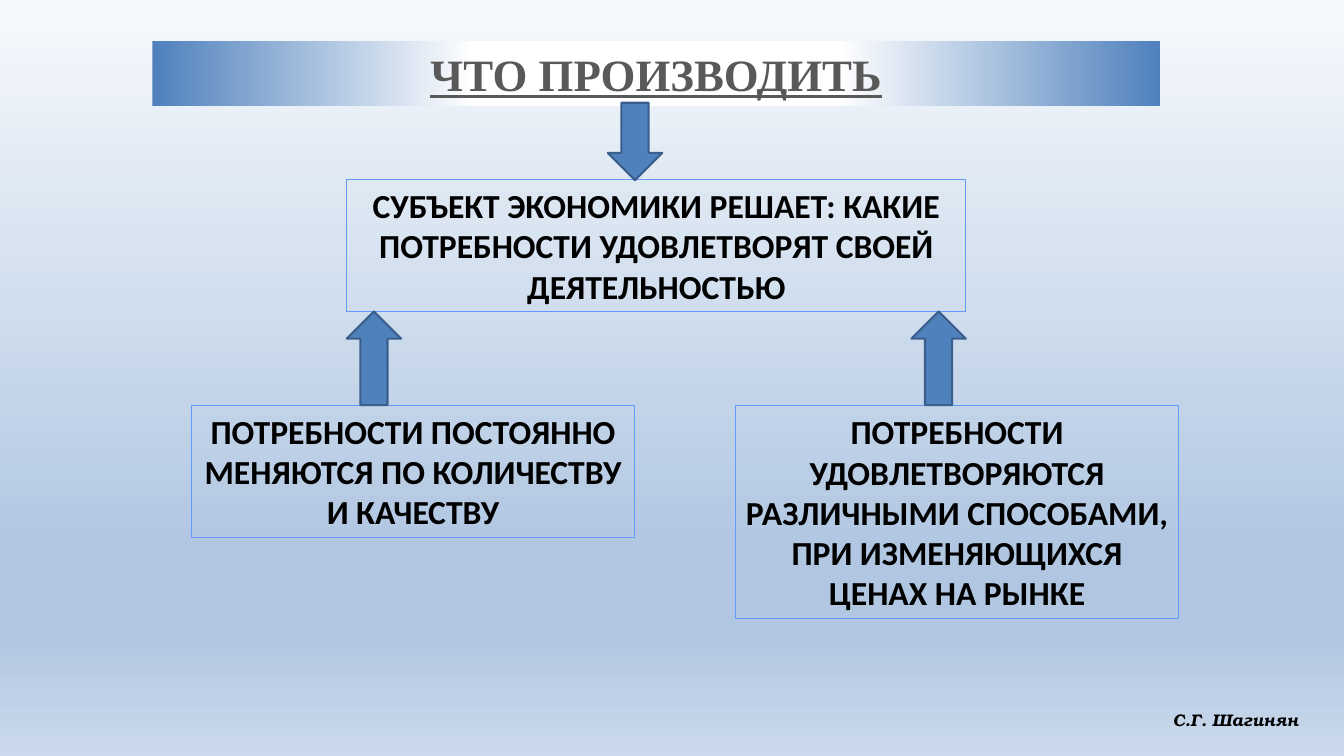
from copy import deepcopy
from pptx import Presentation
from pptx.dml.color import RGBColor
from pptx.enum.shapes import MSO_SHAPE
from pptx.enum.text import MSO_ANCHOR, MSO_AUTO_SIZE, PP_ALIGN
from pptx.oxml.ns import qn
from pptx.util import Cm, Pt

BLUE, WHITE, BLACK = "4F81BD", "FFFFFF", "000000"


def color(code):
    """Turn a hex string into a colour."""
    return RGBColor.from_string(code)


def blend(fill, root, stops, angle):
    """Give a fill a linear gradient with any number of stops."""
    fill.gradient()
    fill.gradient_angle = angle
    marks = root.find(".//" + qn("a:gsLst"))
    for _ in stops[2:]:
        marks.append(deepcopy(marks[0]))
    for mark, (place, code) in zip(fill.gradient_stops, stops):
        mark.position = place
        mark.color.rgb = color(code)


def write(shape, text, size, face, code, align=PP_ALIGN.CENTER, wrap=True):
    """Write one bold run into a shape and return its font."""
    frame = shape.text_frame
    frame.word_wrap = wrap
    frame.auto_size = MSO_AUTO_SIZE.NONE
    frame.vertical_anchor = MSO_ANCHOR.MIDDLE
    par = frame.paragraphs[0]
    par.alignment = align
    run = par.add_run()
    run.text = text
    font = run.font
    font.size, font.name, font.bold = Pt(size), face, True
    font.color.rgb = color(code)
    return font


def draw(slide, kind, box, line, width, fill=None):
    """Draw a flat outlined shape in a box given in centimetres."""
    shape = slide.shapes.add_shape(kind, *map(Cm, box))
    shape.shadow.inherit = False
    shape.line.color.rgb = color(line)
    shape.line.width = Pt(width)
    if fill:
        shape.fill.solid()
        shape.fill.fore_color.rgb = color(fill)
    else:
        shape.fill.background()
    return shape


def banner(slide, box, text):
    """Place the title on its shaded band."""
    title = slide.shapes.title
    title.left, title.top, title.width, title.height = map(Cm, box)
    stops = [(0, BLUE), (0.32, WHITE), (0.68, WHITE), (1, BLUE)]
    blend(title.fill, title.element, stops, 0)
    write(title, text, 32, "Times New Roman", "595959").underline = True


def card(slide, box, text):
    """Place a framed statement."""
    shape = draw(slide, MSO_SHAPE.RECTANGLE, box, "6699FF", 0.75)
    write(shape, text, 24, "Calibri", BLACK)


def arrow(slide, kind, box):
    """Place a block arrow."""
    draw(slide, kind, box, "3A5F8C", 1.5, BLUE)


def scheme(slide, box):
    """Place the decision, its two reasons and the arrows in a box."""
    left, top, width, high = box
    wide, step, side = 1.37, 2.36, 11.16
    x, y, span = left + 3.91, top + 1.93, 15.6
    low = y + high + step
    card(slide, (x, y, span, high),
         "СУБЪЕКТ ЭКОНОМИКИ РЕШАЕТ: КАКИЕ ПОТРЕБНОСТИ УДОВЛЕТВОРЯТ "
         "СВОЕЙ ДЕЯТЕЛЬНОСТЬЮ")
    card(slide, (left, low, side, high),
         "ПОТРЕБНОСТИ ПОСТОЯННО МЕНЯЮТСЯ ПО КОЛИЧЕСТВУ И КАЧЕСТВУ")
    card(slide, (left + width - side, low, side, 5.38),
         "ПОТРЕБНОСТИ УДОВЛЕТВОРЯЮТСЯ РАЗЛИЧНЫМИ СПОСОБАМИ, "
         "ПРИ ИЗМЕНЯЮЩИХСЯ ЦЕНАХ НА РЫНКЕ")
    arrow(slide, MSO_SHAPE.DOWN_ARROW, (left + 10.49, top, wide, 1.95))
    for edge in (x, x + span - wide):
        arrow(slide, MSO_SHAPE.UP_ARROW, (edge, y + high, wide, step))


def credit(slide, box, text):
    """Place the author's name."""
    shape = slide.shapes.add_textbox(*map(Cm, box))
    font = write(shape, text, 12, "TeX Gyre Bonum", BLACK, PP_ALIGN.LEFT, False)
    font.italic = True


def main():
    """Build and save the slide."""
    deck = Presentation()
    deck.slide_width, deck.slide_height = Cm(33.87), Cm(19.05)
    slide = deck.slides.add_slide(deck.slide_layouts[5])
    sky = [(0, "F6F9FC"), (0.74, "B0C6E1"), (0.83, "B0C6E1"), (1, "CAD9EB")]
    blend(slide.background.fill, slide.element, sky, 270)
    banner(slide, (3.84, 1.04, 25.4, 1.63), "ЧТО ПРОИЗВОДИТЬ")
    scheme(slide, (4.83, 2.59, 24.87, 3.33))
    credit(slide, (29.31, 17.75, 3.68, 0.76), "С.Г. Шагинян")
    deck.save("out.pptx")


if __name__ == "__main__":
    main()
